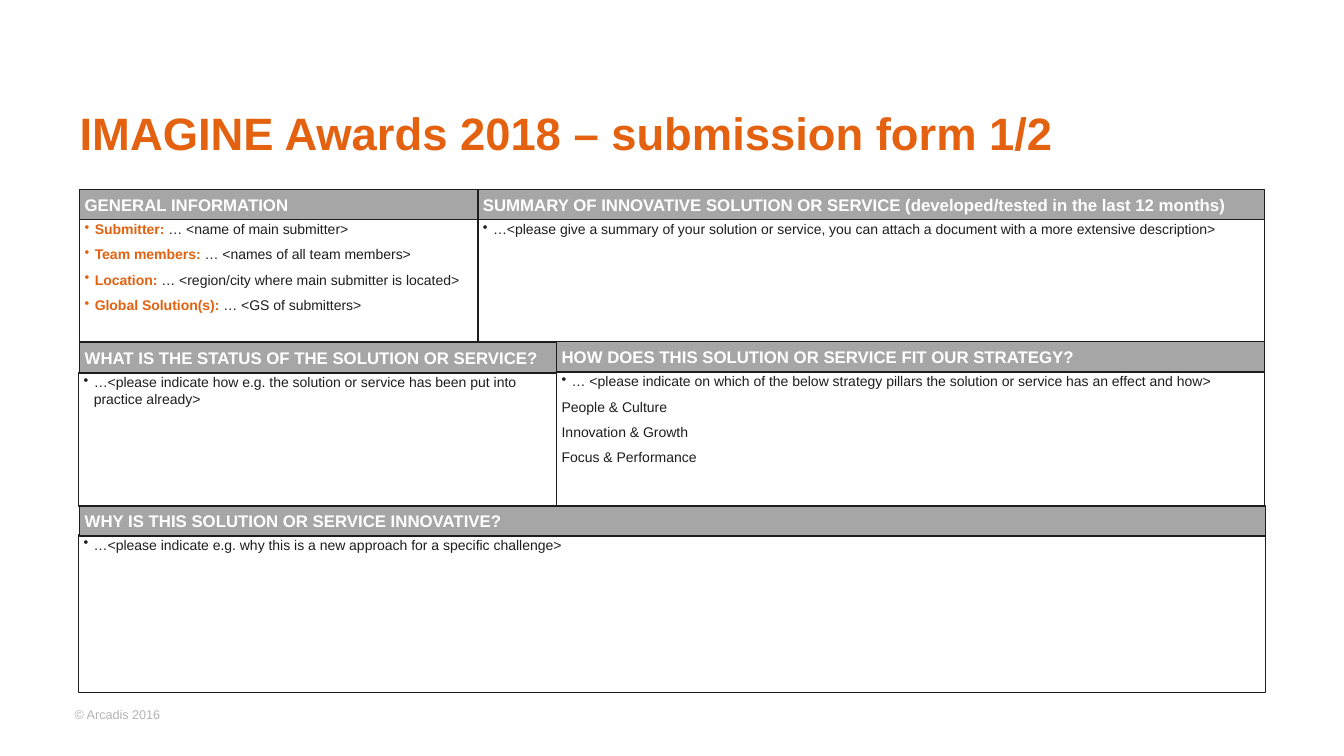
from lxml import etree
from pptx import Presentation
from pptx.dml.color import RGBColor
from pptx.enum.shapes import MSO_SHAPE as SHAPE
from pptx.enum.text import MSO_ANCHOR as ANCHOR, PP_ALIGN as ALIGN
from pptx.oxml.ns import qn
from pptx.util import Inches, Pt

ORANGE, INK, GREY, WHITE = "E4610F", "1D1D1D", "A6A6A6", "FFFFFF"
PALE = "B3B3B3"
INSET = 0.05
TEXT_RISE = 0.04  # answer text starts slightly above its box

# header position (left, top, width), answer box (left, top, width, height),
# header, answers as (bold label, text, bulleted)
SECTIONS = [
    ((0.79, 1.88, 3.96), (0.79, 2.18, 3.96, 1.21), "GENERAL INFORMATION", [
        ("Submitter:", " … <name of main submitter>", True),
        ("Team members:", " … <names of all team members>", True),
        ("Location:", " … <region/city where main submitter is located>", True),
        ("Global Solution(s):", " … <GS of submitters>", True),
    ]),
    ((4.74, 1.88, 7.8), (4.74, 2.18, 7.8, 1.21),
     "SUMMARY OF INNOVATIVE SOLUTION OR SERVICE (developed/tested in the last 12 months)", [
        ("", "…<please give a summary of your solution or service, "
             "you can attach a document with a more extensive description>", True),
    ]),
    ((0.79, 3.4, 4.74), (0.78, 3.7, 4.75, 1.32),
     "WHAT IS THE STATUS OF THE SOLUTION OR SERVICE?", [
        ("", "…<please indicate how e.g. the solution or service "
             "has been put into practice already>", True),
    ]),
    ((5.52, 3.39, 7.02), (5.52, 3.69, 7.02, 1.48),
     "HOW DOES THIS SOLUTION OR SERVICE FIT OUR STRATEGY?", [
        ("", "… <please indicate on which of the below strategy pillars "
             "the solution or service has an effect and how>", True),
        ("", "People & Culture", False),
        ("", "Innovation & Growth", False),
        ("", "Focus & Performance", False),
    ]),
    ((0.79, 5.02, 11.76), (0.78, 5.31, 11.77, 1.56),
     "WHY IS THIS SOLUTION OR SERVICE INNOVATIVE?", [
        ("", "…<please indicate e.g. why this is a new approach "
             "for a specific challenge>", True),
    ]),
]


def color(value):
    return RGBColor.from_string(value)


def style(font, size, value, bold=False):
    font.name, font.size, font.bold = "Arial", Pt(size), bold
    font.color.rgb = color(value)


def set_frame(tf, inset=INSET, anchor=ANCHOR.TOP, wrap=True):
    tf.margin_left = tf.margin_right = Inches(inset)
    tf.margin_top = tf.margin_bottom = Inches(inset)
    tf.vertical_anchor, tf.word_wrap = anchor, wrap


def add_box(s, left, top, width, height, fill):
    box = s.shapes.add_shape(SHAPE.RECTANGLE, Inches(left), Inches(top),
                             Inches(width), Inches(height))
    box.shadow.inherit = False
    box.fill.solid()
    box.fill.fore_color.rgb = color(fill)
    box.line.color.rgb = color(INK)
    box.line.width = Pt(1)
    return box


def add_text(s, left, top, width, height, **frame):
    tf = s.shapes.add_textbox(Inches(left), Inches(top),
                              Inches(width), Inches(height)).text_frame
    set_frame(tf, **frame)
    return tf


def add_bullet(p):
    pPr = p._p.get_or_add_pPr()
    pPr.set("marL", str(Inches(0.1)))
    pPr.set("indent", str(-Inches(0.1)))
    etree.SubElement(pPr, qn("a:buChar")).set("char", "•")


def add_answers(s, left, top, width, height, answers):
    tf = add_text(s, left, top - TEXT_RISE, width, height)
    for i, (label, text, bulleted) in enumerate(answers):
        p = tf.add_paragraph() if i else tf.paragraphs[0]
        if bulleted:
            add_bullet(p)
        if i:
            p.space_before = Pt(6)
        for part, value, bold in ((label, ORANGE, True), (text, INK, False)):
            if part:
                r = p.add_run()
                r.text = part
                style(r.font, 10, value, bold)


def add_header(s, left, top, width, text):
    tf = add_box(s, left, top, width, 0.3, GREY).text_frame
    set_frame(tf)
    tf.text = text
    p = tf.paragraphs[0]
    p.alignment = ALIGN.LEFT
    style(p.runs[0].font, 12, WHITE, True)


def set_title(s, text):
    title = s.shapes.title
    title.left, title.top = Inches(0.79), Inches(1.1)
    title.width, title.height = Inches(11.76), Inches(0.69)
    tf = title.text_frame
    set_frame(tf, inset=0)
    tf.text = text
    p = tf.paragraphs[0]
    p.alignment, p.line_spacing = ALIGN.LEFT, 0.9
    style(p.runs[0].font, 32.4, ORANGE, True)


def main():
    prs = Presentation()
    prs.slide_width, prs.slide_height = Inches(13.33), Inches(7.5)
    s = prs.slides.add_slide(prs.slide_layouts[5])

    set_title(s, "IMAGINE Awards 2018 – submission form 1/2")

    # Form sections
    for header_at, box_at, header, answers in SECTIONS:
        add_box(s, *box_at, WHITE)
        add_answers(s, *box_at, answers)
        add_header(s, *header_at, header)

    # Copyright line
    tf = add_text(s, 0.69, 6.97, 0.96, 0.23, anchor=ANCHOR.MIDDLE, wrap=False)
    tf.text = "© Arcadis 2016"
    style(tf.paragraphs[0].runs[0].font, 9, PALE)

    prs.save("out.pptx")


if __name__ == "__main__":
    main()
